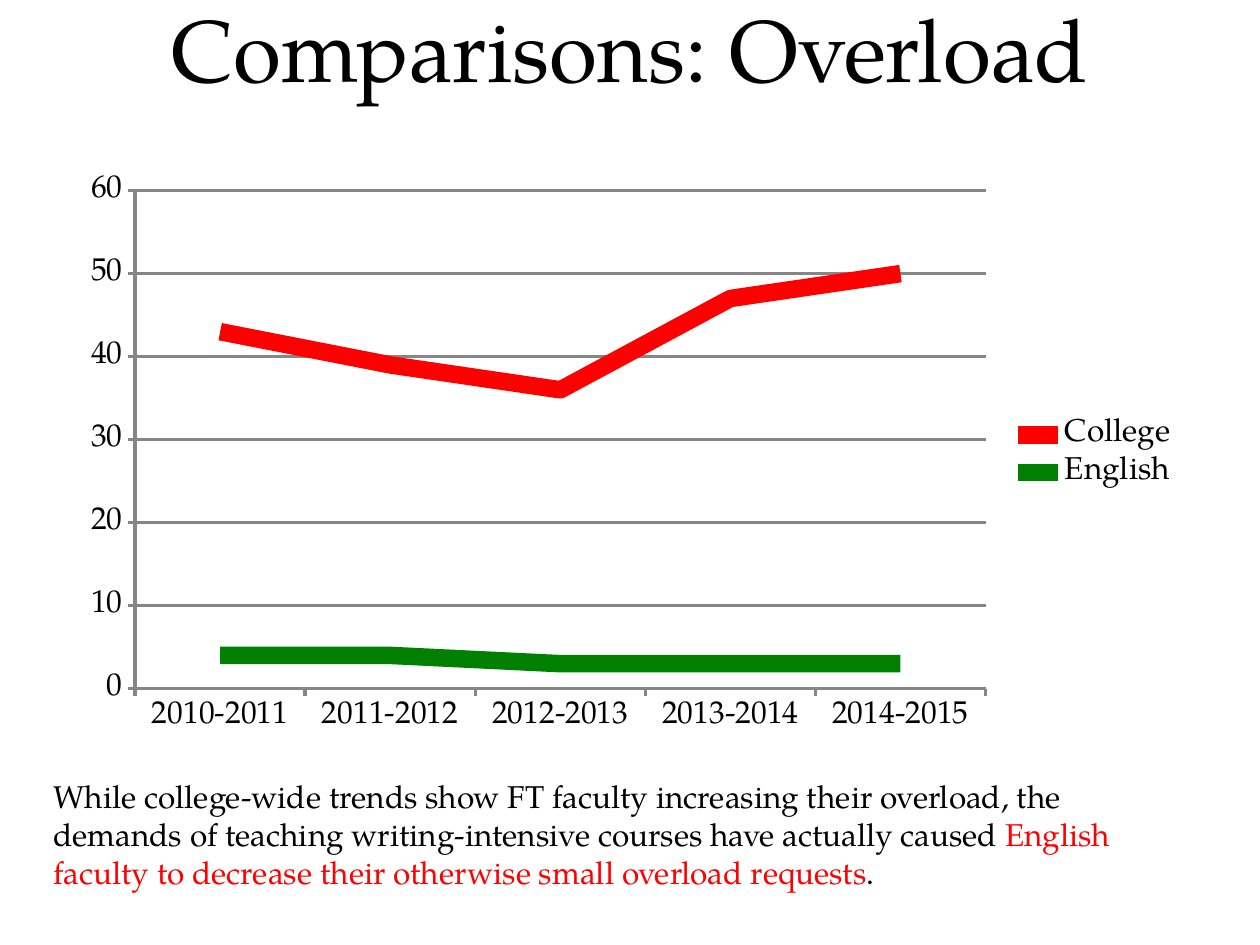
from pptx import Presentation
from pptx.chart.data import CategoryChartData
from pptx.dml.color import RGBColor
from pptx.enum.chart import XL_CHART_TYPE as ChartType
from pptx.enum.chart import XL_LEGEND_POSITION as LegendPosition
from pptx.enum.chart import XL_MARKER_STYLE as MarkerStyle
from pptx.enum.chart import XL_TICK_MARK as TickMark
from pptx.enum.text import MSO_ANCHOR as Anchor
from pptx.enum.text import PP_ALIGN as Align
from pptx.util import Pt

BLACK = RGBColor(0, 0, 0)
RED = RGBColor(255, 0, 0)
GREEN = RGBColor(0, 128, 0)
GRAY = RGBColor(134, 134, 134)
FONT = "TeX Gyre Pagella"

# Content
TITLE = [("Comparisons: Overload", BLACK)]
YEARS = ["2010-2011", "2011-2012", "2012-2013", "2013-2014", "2014-2015"]
OVERLOAD = [
    ("English", GREEN, (4, 4, 3, 3, 3)),
    ("College", RED, (39, 35, 33, 44, 47)),
]
SUMMARY = [
    ("While college-wide trends show FT faculty increasing their overload, "
     "the demands of teaching writing-intensive courses have actually caused ", BLACK),
    ("English faculty to decrease their otherwise small overload requests", RED),
    (".", BLACK),
]

# Layout, in points
LEFT, WIDTH = 39.3, 641.5
TITLE_BOX = (LEFT, 7.2, WIDTH, 53.3)
CHART_BOX = (LEFT, 93.3, WIDTH, 332)
SUMMARY_BOX = (23.5, 440.6, 667.4, 72.7)


def style_font(font, size, color):
    for name, value in {"name": FONT, "size": Pt(size)}.items():
        setattr(font, name, value)
    font.color.rgb = color


def style_line(line, width, color):
    line.width = Pt(width)
    line.color.rgb = color


def add_text(slide, box, runs, size, align=Align.LEFT, anchor=Anchor.TOP):
    frame = slide.shapes.add_textbox(*map(Pt, box)).text_frame
    for name, value in {"word_wrap": True, "vertical_anchor": anchor}.items():
        setattr(frame, name, value)
    paragraph = frame.paragraphs[0]
    paragraph.alignment = align
    for text, color in runs:
        run = paragraph.add_run()
        run.text = text
        style_font(run.font, size, color)


def add_overload_chart(slide):
    data = CategoryChartData()
    data.categories = YEARS
    for name, _, values in OVERLOAD:
        data.add_series(name, values)
    chart = slide.shapes.add_chart(
        ChartType.LINE_STACKED, *map(Pt, CHART_BOX), data).chart
    style_font(chart.font, 18, BLACK)
    chart.has_title = False
    chart.has_legend = True
    chart.legend.position = LegendPosition.RIGHT
    chart.legend.include_in_layout = False

    # Axes and gridlines
    values_axis = chart.value_axis
    scale = {"minimum_scale": 0, "maximum_scale": 60, "major_unit": 10,
             "has_major_gridlines": True}
    for name, value in scale.items():
        setattr(values_axis, name, value)
    values_axis.tick_labels.number_format = "General"
    values_axis.tick_labels.number_format_is_linked = False
    style_line(values_axis.major_gridlines.format.line, 1.75, GRAY)
    for axis in (chart.category_axis, values_axis):
        axis.major_tick_mark = TickMark.OUTSIDE
        style_line(axis.format.line, 2, GRAY)

    # Series
    plot = chart.plots[0]
    plot.vary_by_categories = False
    for series, (_, color, _) in zip(plot.series, OVERLOAD):
        series.smooth = False
        series.marker.style = MarkerStyle.NONE
        style_line(series.format.line, 10, color)


def main():
    deck = Presentation()
    deck.slide_width, deck.slide_height = Pt(720), Pt(540)
    slide = deck.slides.add_slide(deck.slide_layouts[6])
    add_text(slide, TITLE_BOX, TITLE, 50, Align.CENTER, Anchor.BOTTOM)
    add_overload_chart(slide)
    add_text(slide, SUMMARY_BOX, SUMMARY, 18)
    deck.save("out.pptx")


if __name__ == "__main__":
    main()
